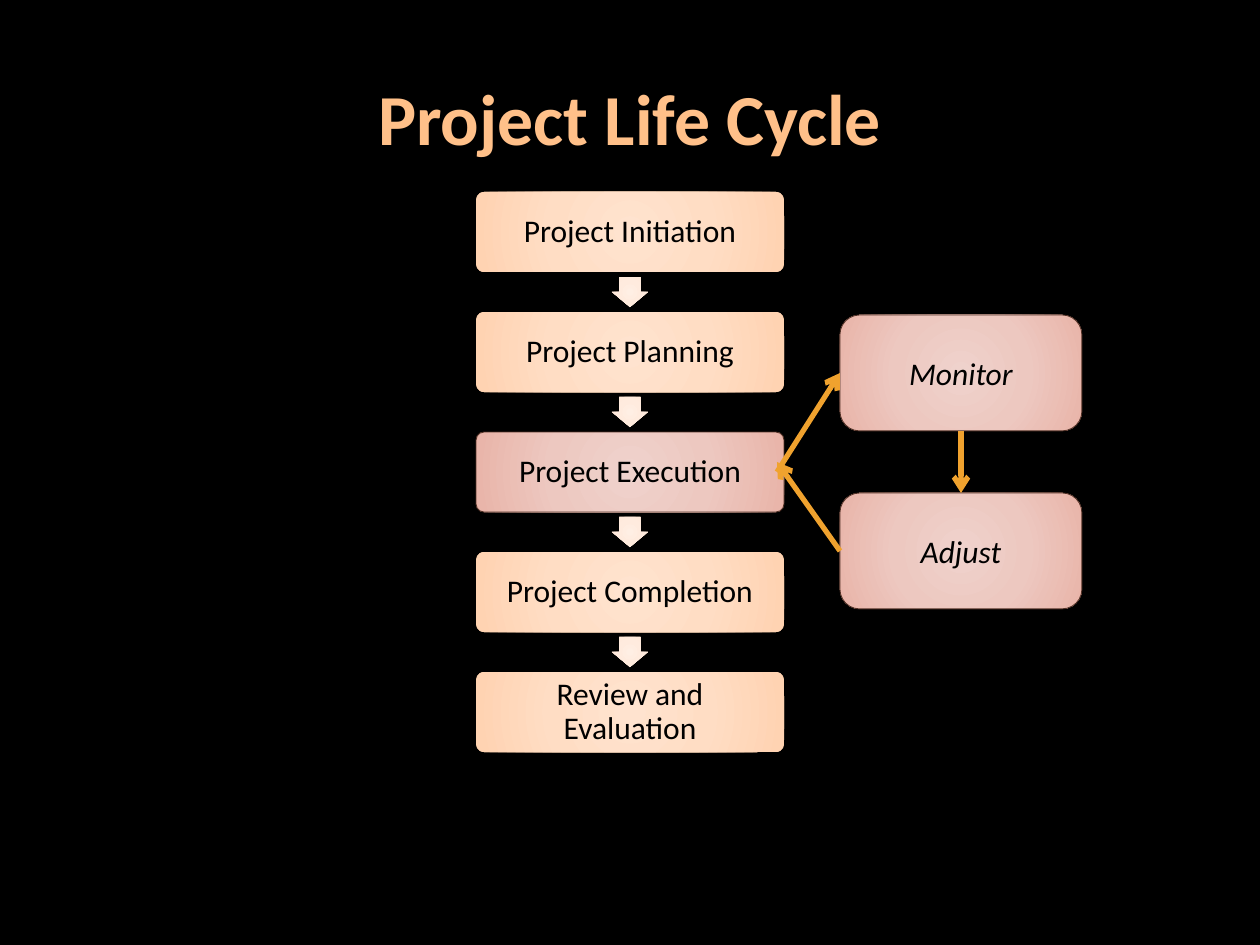
from dataclasses import dataclass
from typing import Optional

import pptx
import pptx.dml.color
import pptx.enum.shapes
import pptx.enum.text
import pptx.oxml
import pptx.oxml.ns
import pptx.util

SCALE = 914400 / 126  # EMU in one px
KIND = pptx.enum.shapes.MSO_SHAPE
HEX = {
    "back": "000000",
    "text": "000000",
    "title": "FFC089",
    "edge": "523227",
    "link": "F0A22E",
}
SPOTS = (0, 50, 97, 100)
GLOW = {
    "peach": ("FFE3CF", "FFDDC4", "FFD3B2", "FFD1AC"),
    "rose": ("EFD2CC", "EDC8C0", "E9B5AA", "EAAFA2"),
    "pale": ("FFEFE4", "FFEBDE", "FFE6D4", "FFE4D1"),
}
FONT = {"name": "Calibri", "size": pptx.util.Pt(18), "bold": False, "italic": False}


@dataclass
class Box:
    text: str
    left: int
    top: int
    width: int
    height: int
    glow: str = "peach"
    round: float = 0.1
    space: float = 0.9
    italic: bool = False


@dataclass
class Link:
    start: tuple[int, int]
    end: tuple[int, int]
    tail: Optional[tuple] = None  # shape and side where the line starts
    head: Optional[tuple] = None  # shape and side where the line ends


def px(count: int) -> int:
    return round(count * SCALE)


def tint(name: str):
    return pptx.dml.color.RGBColor.from_string(HEX[name])


def style(font, color: str, **extra) -> None:
    for key, value in {**FONT, **extra}.items():
        setattr(font, key, value)
    font.color.rgb = tint(color)


def shine(shape, glow: str) -> None:
    """Fill a shape with a radial gradient and edge the rose ones."""
    stops = "".join(
        f'<a:gs pos="{spot * 1000}"><a:srgbClr val="{color}"/></a:gs>'
        for spot, color in zip(SPOTS, GLOW[glow])
    )
    grad = pptx.oxml.parse_xml(
        f'<a:gradFill {pptx.oxml.ns.nsdecls("a")} rotWithShape="1">'
        f'<a:gsLst>{stops}</a:gsLst><a:path path="circle">'
        '<a:fillToRect l="100000" t="100000" r="100000" b="100000"/>'
        "</a:path></a:gradFill>"
    )
    shape.shadow.inherit = False
    shape.fill.background()
    props = shape._element.spPr
    props.replace(props.find(pptx.oxml.ns.qn("a:noFill")), grad)
    if glow == "rose":
        shape.line.color.rgb = tint("edge")
        shape.line.width = pptx.util.Pt(0.5)
    else:
        shape.line.fill.background()


def add_box(slide, box: Box):
    shape = slide.shapes.add_shape(
        KIND.ROUNDED_RECTANGLE,
        px(box.left), px(box.top), px(box.width), px(box.height),
    )
    shape.adjustments[0] = box.round
    shine(shape, box.glow)
    frame = shape.text_frame
    frame.word_wrap = True
    frame.vertical_anchor = pptx.enum.text.MSO_ANCHOR.MIDDLE
    for side in ("left", "top", "right", "bottom"):
        setattr(frame, f"margin_{side}", px(9))
    para = frame.paragraphs[0]
    para.text = box.text
    para.alignment = pptx.enum.text.PP_ALIGN.CENTER
    para.line_spacing = box.space
    style(para.runs[0].font, "text", italic=box.italic)
    return shape


def add_arrow(slide, left: int, top: int) -> None:
    shape = slide.shapes.add_shape(KIND.DOWN_ARROW, px(left), px(top), px(36), px(30))
    shape.adjustments[0] = 0.6
    shape.adjustments[1] = 0.5
    shine(shape, "pale")


def add_link(slide, link: Link) -> None:
    line = slide.shapes.add_connector(
        pptx.enum.shapes.MSO_CONNECTOR.STRAIGHT,
        *map(px, link.start), *map(px, link.end),
    )
    if link.tail:
        line.begin_connect(*link.tail)
    if link.head:
        line.end_connect(*link.head)
    line.line.color.rgb = tint("link")
    line.line.width = pptx.util.Pt(3)
    names = pptx.oxml.ns.nsdecls("a")
    line.line._ln.append(pptx.oxml.parse_xml(f'<a:tailEnd {names} type="arrow"/>'))
    line._element.spPr.append(pptx.oxml.parse_xml(f"<a:effectLst {names}/>"))


def main() -> None:
    deck = pptx.Presentation()
    deck.slide_width, deck.slide_height = px(1260), px(945)
    slide = deck.slides.add_slide(deck.slide_layouts[5])
    slide.background.fill.solid()
    slide.background.fill.fore_color.rgb = tint("back")

    # Title
    title = slide.shapes.title
    place = {"left": 63, "top": 38, "width": 1134, "height": 158}
    for key, value in place.items():
        setattr(title, key, px(value))
    title.text_frame.text = "Project Life Cycle"
    title.text_frame.vertical_anchor = pptx.enum.text.MSO_ANCHOR.MIDDLE
    para = title.text_frame.paragraphs[0]
    para.alignment = pptx.enum.text.PP_ALIGN.CENTER
    style(para.runs[0].font, "title", size=pptx.util.Pt(41), bold=True)

    # Column of phases with arrows between them
    phases = ("Initiation", "Planning", "Execution", "Completion")
    steps = [f"Project {phase}" for phase in phases] + ["Review and Evaluation"]
    for row, text in enumerate(steps):
        top = 192 + 120 * row
        glow = "rose" if text == "Project Execution" else "peach"
        add_box(slide, Box(text, 476, top, 308, 80, glow))
        if row < len(steps) - 1:
            add_arrow(slide, 612, top + 85)

    # Control loop beside the execution phase
    watch, tune = (
        add_box(slide, Box(text, 840, top, 242, 116, "rose", 0.17, 1.0, True))
        for text, top in (("Monitor", 315), ("Adjust", 493))
    )
    for link in (
        Link((777, 472), (840, 373), head=(watch, 1)),
        Link((961, 431), (961, 493), tail=(watch, 2), head=(tune, 0)),
        Link((840, 551), (777, 462), tail=(tune, 1)),
    ):
        add_link(slide, link)

    deck.save("out.pptx")


if __name__ == "__main__":
    main()
